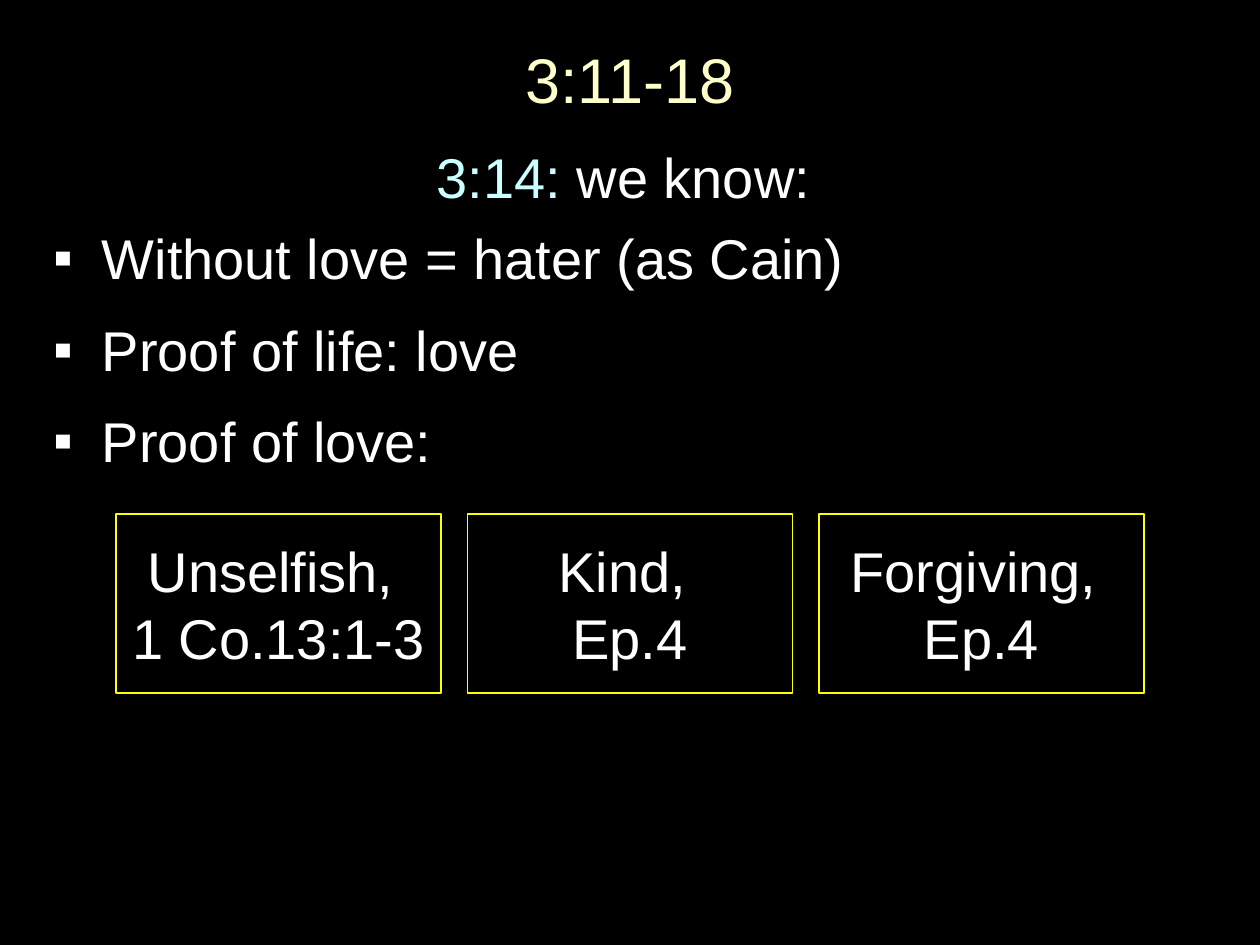
from lxml.etree import SubElement
from pptx import Presentation
from pptx.dml.color import RGBColor
from pptx.enum.shapes import MSO_SHAPE
from pptx.enum.text import MSO_ANCHOR, PP_ALIGN
from pptx.oxml.ns import qn
from pptx.util import Inches, Pt

COLORS = {
    "background": "000000",
    "title": "FFFFCC",
    "reference": "CCFFFF",
    "text": "FFFFFF",
    "outline": "FFFF00",
}
FONT = "Arial"


def color(name):
    return RGBColor.from_string(COLORS[name])


def add_text(paragraph, text, size=32, color_name="text", align=None, before=0, after=0):
    """Append text to a paragraph, with a line break at each newline."""
    paragraph.alignment = align
    paragraph.space_before = Pt(before)
    paragraph.space_after = Pt(after)
    for index, line in enumerate(text.split("\n")):
        if index:
            paragraph.add_line_break()
        run = paragraph.add_run()
        run.text = line
        run.font.name = FONT
        run.font.size = Pt(size)
        run.font.color.rgb = color(color_name)


def add_bullet(paragraph, indent=0.38):
    properties = paragraph._p.get_or_add_pPr()
    properties.set("marL", str(Inches(indent)))
    properties.set("indent", str(-Inches(indent)))
    SubElement(properties, qn("a:buFont"), typeface=FONT)
    SubElement(properties, qn("a:buChar"), char="▪")


def add_text_frame(slide, left, top, width, height, anchor):
    box = slide.shapes.add_textbox(Inches(left), Inches(top), Inches(width), Inches(height))
    frame = box.text_frame
    frame.word_wrap = True
    frame.vertical_anchor = anchor
    return frame


def add_title(slide, left, top, width, height, text):
    frame = add_text_frame(slide, left, top, width, height, MSO_ANCHOR.MIDDLE)
    add_text(frame.paragraphs[0], text, size=36, color_name="title", align=PP_ALIGN.CENTER)


def add_body(slide, left, top, width, height, reference, lead, points):
    frame = add_text_frame(slide, left, top, width, height, MSO_ANCHOR.TOP)
    heading = frame.paragraphs[0]
    add_text(heading, reference, color_name="reference", align=PP_ALIGN.CENTER)
    add_text(heading, lead, align=PP_ALIGN.CENTER)
    for point in points:
        paragraph = frame.add_paragraph()
        add_bullet(paragraph)
        add_text(paragraph, point, before=8, after=0 if point == points[-1] else 6)


def add_proofs(slide, left, top, width, height, proofs, gap=0.21):
    """Fill a row with equal outlined boxes."""
    box_width = (width - gap * (len(proofs) - 1)) / len(proofs)
    for index, proof in enumerate(proofs):
        shape = slide.shapes.add_shape(
            MSO_SHAPE.RECTANGLE,
            Inches(left + index * (box_width + gap)), Inches(top),
            Inches(box_width), Inches(height))
        shape.shadow.inherit = False
        shape.fill.solid()
        shape.fill.fore_color.rgb = color("background")
        shape.line.color.rgb = color("outline")
        shape.line.width = Pt(1)
        frame = shape.text_frame
        frame.word_wrap = True
        frame.vertical_anchor = MSO_ANCHOR.MIDDLE
        add_text(frame.paragraphs[0], proof, align=PP_ALIGN.CENTER)


def main():
    presentation = Presentation()
    presentation.slide_width = Inches(10)
    presentation.slide_height = Inches(7.5)
    slide = presentation.slides.add_slide(presentation.slide_layouts[6])
    slide.background.fill.solid()
    slide.background.fill.fore_color.rgb = color("background")

    # Title and main points
    add_title(slide, 0.5, 0.08, 9, 1.08, "3:11-18")
    add_body(slide, 0.33, 1.08, 9.36, 5.58, "3:14: ", "we know: ", [
        "Without love = hater (as Cain)",
        "Proof of life: love",
        "Proof of love:",
    ])

    # Proofs of love
    add_proofs(slide, 0.92, 4.08, 8.16, 1.42, [
        "Unselfish, \n1 Co.13:1-3",
        "Kind, \nEp.4",
        "Forgiving, \nEp.4",
    ])
    presentation.save("out.pptx")


if __name__ == "__main__":
    main()
